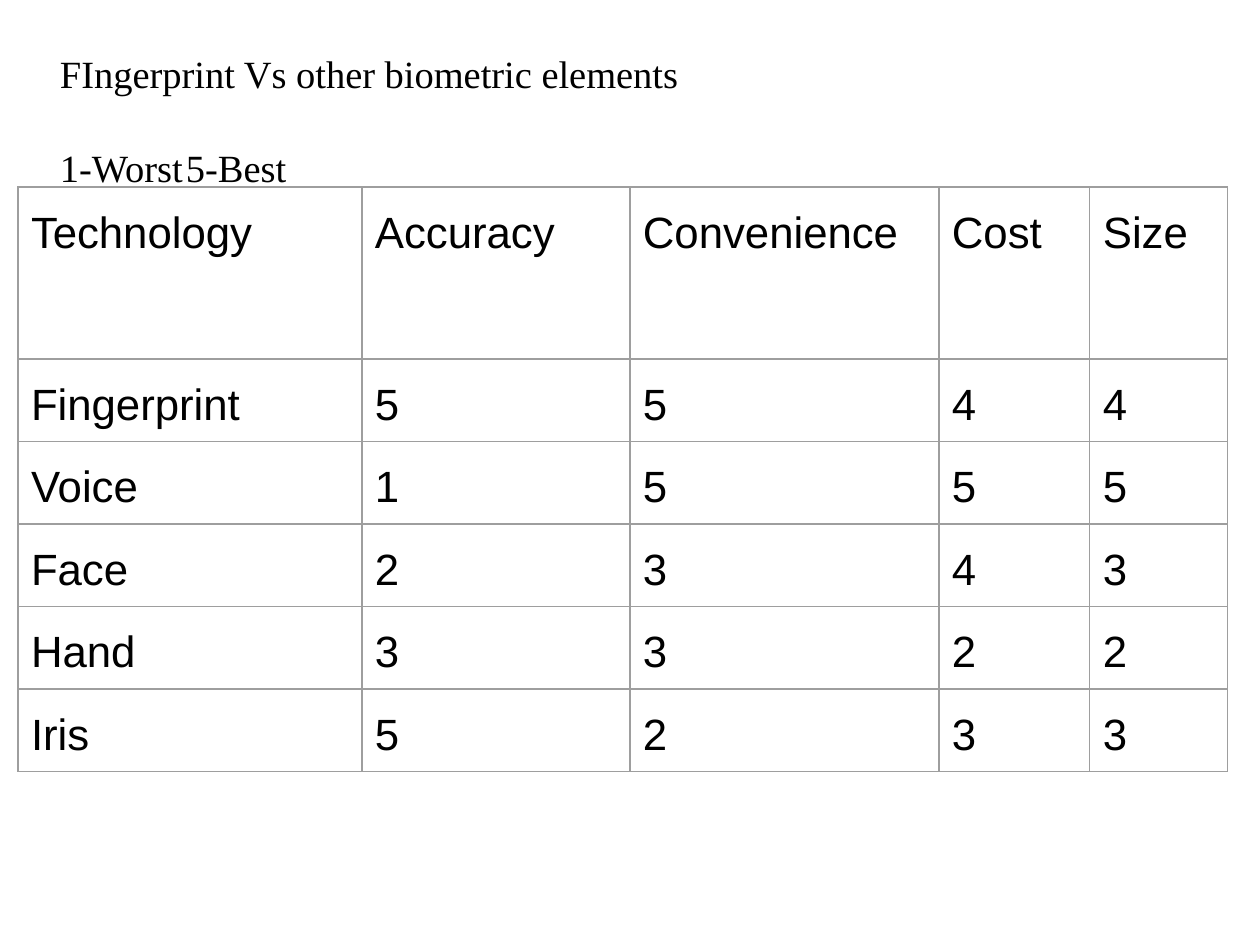
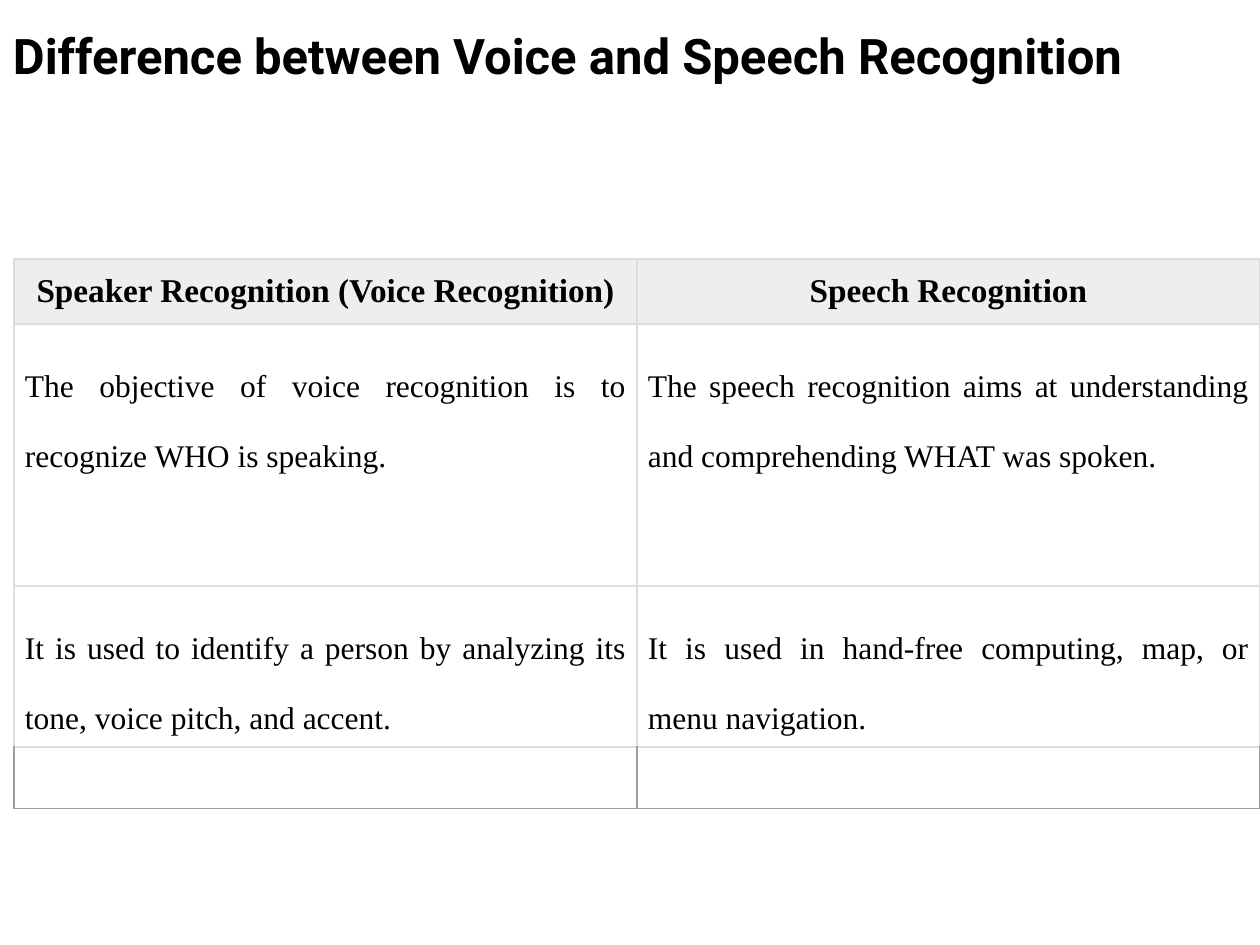
from lxml import etree
from pptx import Presentation
from pptx import util as u
from pptx.dml.color import RGBColor
from pptx.enum import text
from pptx.oxml.ns import qn

PX = 914400 / 126
BLACK = RGBColor(0x00, 0x00, 0x00)
GREY = RGBColor(0x9E, 0x9E, 0x9E)
SILVER = RGBColor(0xDD, 0xDD, 0xDD)
HEADER_FILL = RGBColor(0xEE, 0xEE, 0xEE)
SERIF = "Times New Roman"

RATINGS = [
    ("Technology", "Accuracy", "Convenience", "Cost", "Size"),
    ("Fingerprint", "5", "5", "4", "4"),
    ("Voice", "1", "5", "5", "5"),
    ("Face", "2", "3", "4", "3"),
    ("Hand", "3", "3", "2", "2"),
    ("Iris", "5", "2", "3", "3"),
]
COMPARISON = [
    ("Speaker Recognition (Voice Recognition)", "Speech Recognition"),
    ("The objective of voice recognition is to recognize WHO is speaking.",
     "The speech recognition aims at understanding and comprehending WHAT was spoken."),
    ("It is used to identify a person by analyzing its tone, voice pitch, and accent.",
     "It is used in hand-free computing, map, or menu navigation."),
    ("", ""),
]


def px(length):
    return u.Emu(round(length * PX))


def set_font(paragraph, face, size, bold=False):
    font = paragraph.font
    font.name, font.size, font.bold = face, u.Pt(size), bold
    font.color.rgb = BLACK


def set_margins(target, left, top, right, bottom):
    target.margin_left, target.margin_top = px(left), px(top)
    target.margin_right, target.margin_bottom = px(right), px(bottom)


def add_heading(slide, box, lines, face, size, bold=False, top_margin=13, gap=0):
    frame = slide.shapes.add_textbox(*map(px, box)).text_frame
    frame.word_wrap = True
    set_margins(frame, 13, top_margin, 13, 13)
    frame.text = "\n".join(lines)
    for paragraph in frame.paragraphs:
        set_font(paragraph, face, size, bold)
    for paragraph in frame.paragraphs[1:]:
        paragraph.space_before = u.Pt(gap)


def add_grid(slide, left, top, widths, heights, rows):
    table = slide.shapes.add_table(
        len(rows), len(widths), px(left), px(top),
        px(sum(widths)), px(sum(heights))).table
    table.first_row = table.horz_banding = False
    for column, width in zip(table.columns, widths):
        column.width = px(width)
    for row, height, values in zip(table.rows, heights, rows):
        row.height = px(height)
        for cell, value in zip(row.cells, values):
            cell.text = value
            cell.fill.background()
    return table


def set_borders(cell, color, width, sides="LRTB"):
    properties = cell._tc.get_or_add_tcPr()
    for position, side in enumerate(sides):
        line = etree.Element(qn(f"a:ln{side}"), w=str(u.Pt(width)))
        fill = etree.SubElement(line, qn("a:solidFill"))
        etree.SubElement(fill, qn("a:srgbClr"), val=str(color))
        properties.insert(position, line)


def add_ratings(slide):
    add_heading(slide, (47, 34, 1075, 204),
                ["FIngerprint Vs other biometric elements", "1-Worst\t5-Best"],
                SERIF, 22, top_margin=16, gap=27.5)
    table = add_grid(slide, 18, 187, [344, 268, 309, 151, 138],
                     [172] + [81] * 5, RATINGS)
    for cell in table.iter_cells():
        set_margins(cell, 13, 22, 13, 8)
        set_font(cell.text_frame.paragraphs[0], "Arial", 25)
        set_borders(cell, GREY, 0.75)


def add_comparison(slide):
    add_heading(slide, (0, 0, 1260, 925),
                ["Difference between Voice and Speech Recognition"],
                "Roboto", 28, bold=True, top_margin=25)
    table = add_grid(slide, 14, 259, [623, 623], [64, 262, 161, 62], COMPARISON)
    header, *points, closing = table.rows
    for cell in header.cells:
        paragraph = cell.text_frame.paragraphs[0]
        paragraph.alignment = text.PP_ALIGN.CENTER
        set_font(paragraph, SERIF, 19, bold=True)
        set_margins(cell, 11, 14, 11, 11)
        cell.fill.solid()
        cell.fill.fore_color.rgb = HEADER_FILL
        set_borders(cell, SILVER, 1)
    for point in points:
        for cell in point.cells:
            paragraph = cell.text_frame.paragraphs[0]
            paragraph.alignment = text.PP_ALIGN.JUSTIFY
            paragraph.line_spacing = u.Pt(40)
            set_font(paragraph, SERIF, 18)
            set_margins(cell, 11, 10, 11, 10)
            set_borders(cell, SILVER, 1)
    for cell in closing.cells:
        set_margins(cell, 11, 11, 11, 11)
        set_borders(cell, SILVER, 1, "T")
        set_borders(cell, GREY, 0.75, "LR")
        cell_properties = cell._tc.get_or_add_tcPr()
        bottom = etree.Element(qn("a:lnB"), w=str(u.Pt(0.75)))
        fill = etree.SubElement(bottom, qn("a:solidFill"))
        etree.SubElement(fill, qn("a:srgbClr"), val=str(GREY))
        cell_properties.insert(3, bottom)


def main():
    deck = Presentation()
    deck.slide_width, deck.slide_height = px(1260), px(945)
    for add_content in (add_ratings, add_comparison):
        add_content(deck.slides.add_slide(deck.slide_layouts[6]))
    deck.save("out.pptx")


if __name__ == "__main__":
    main()
